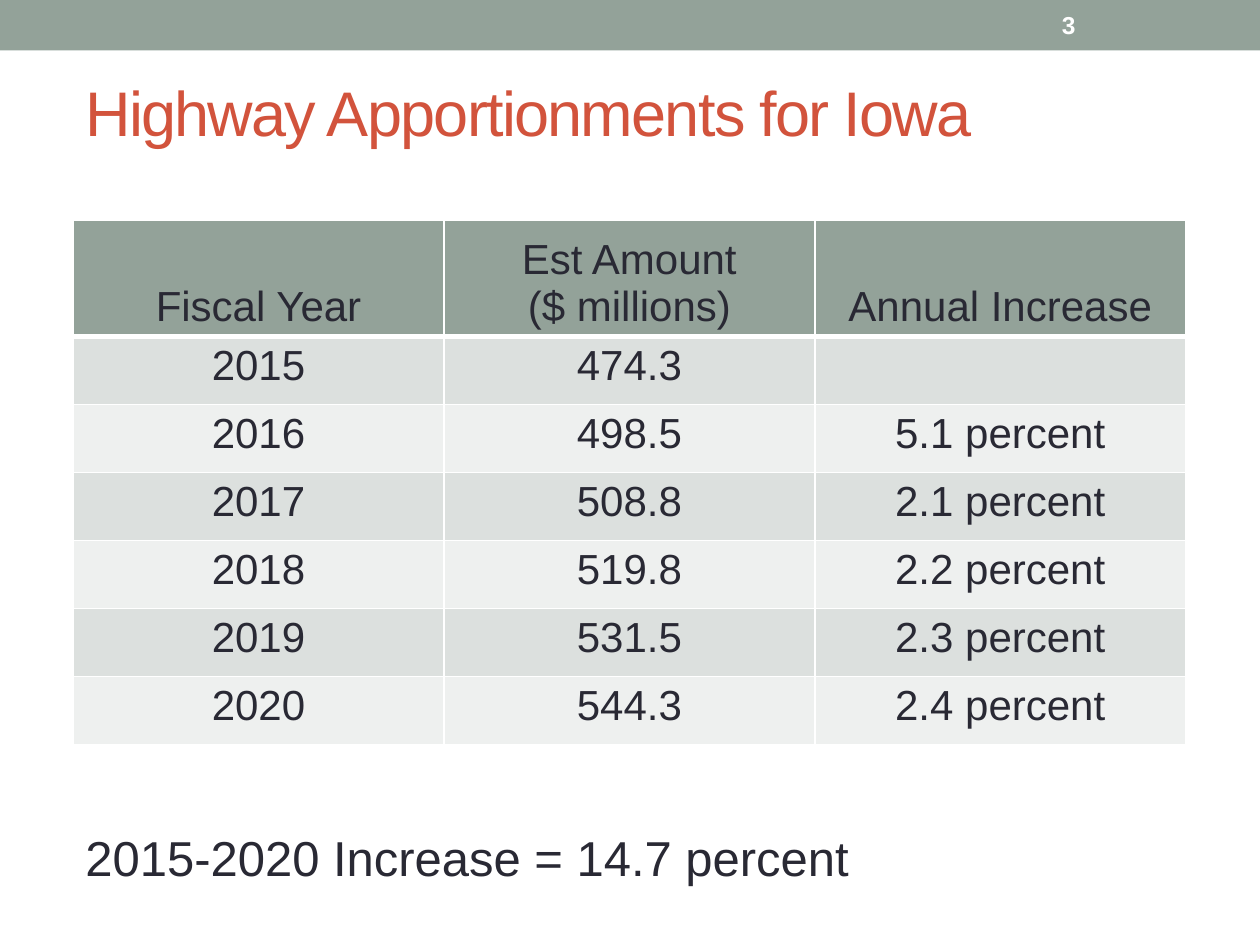
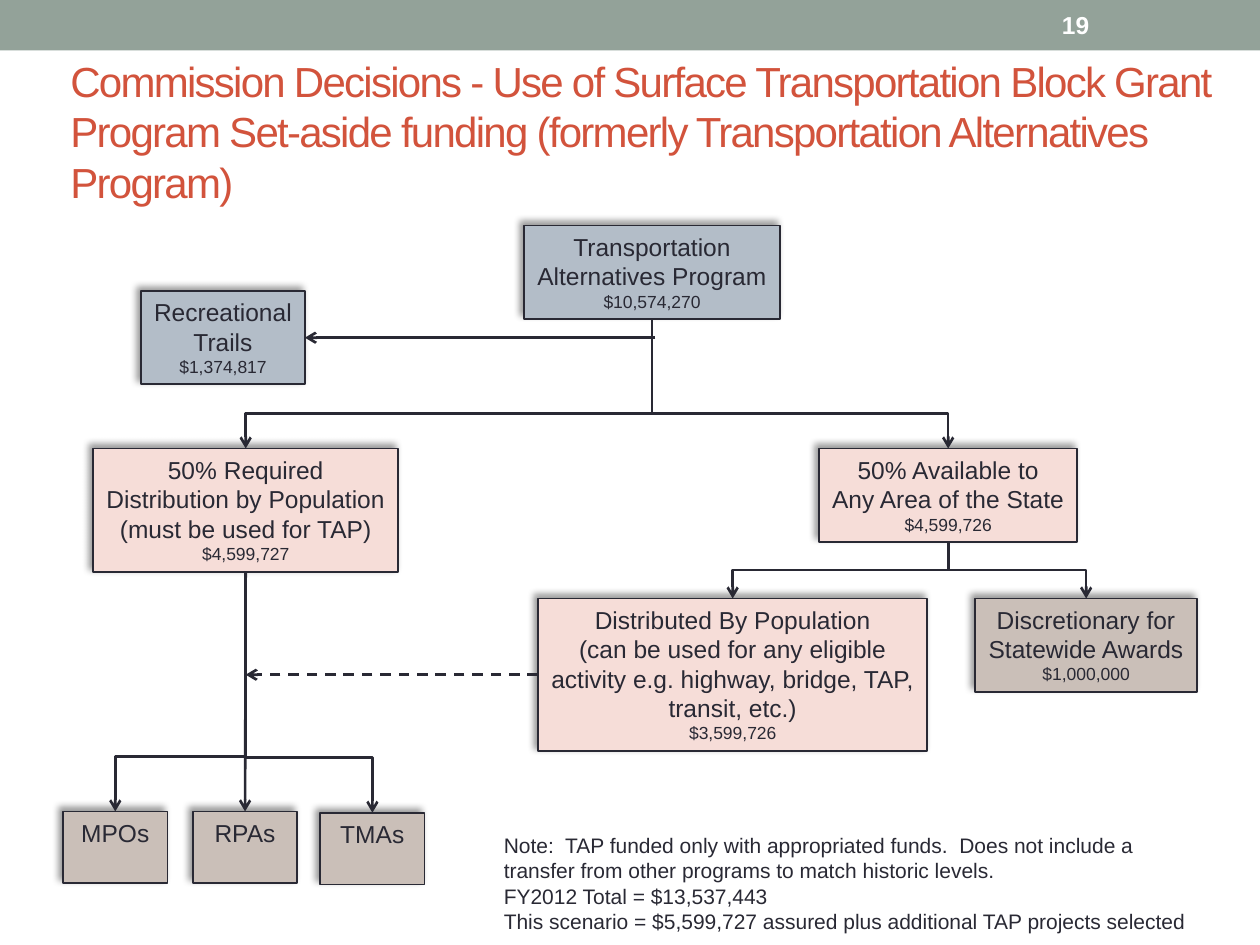
"""Build two slides on highway apportionments and set-aside funding."""
from lxml import etree
from pptx import Presentation
from pptx.dml.color import RGBColor
from pptx.enum.dml import MSO_LINE
from pptx.enum.shapes import MSO_CONNECTOR, MSO_SHAPE
from pptx.enum.text import MSO_ANCHOR, PP_ALIGN
from pptx.oxml.ns import qn
from pptx.util import Inches, Pt

FONT = "Arial"
INK, SAGE, RUST, WHITE = "292934", "93A299", "D2533C", "FFFFFF"
BLUE, PINK, TAUPE = "B3BDC8", "F6DDD8", "CABFB8"
STRIPES = ("DCE0DE", "EEF0EF")
TOP, MIDDLE, BOTTOM = MSO_ANCHOR.TOP, MSO_ANCHOR.MIDDLE, MSO_ANCHOR.BOTTOM
LEFT, CENTER = PP_ALIGN.LEFT, PP_ALIGN.CENTER
STRAIGHT, ELBOW = MSO_CONNECTOR.STRAIGHT, MSO_CONNECTOR.ELBOW
RECTANGLE, DASH = MSO_SHAPE.RECTANGLE, MSO_LINE.DASH
TOP_SITE, BOTTOM_SITE = 0, 2

APPORTIONMENTS = {
    "title": "Highway Apportionments for Iowa",
    "title_at": (0.58, 0.42, 9, 0.92),
    "title_size": 36,
    "number": "3",
    "header": ("Fiscal Year", "Est Amount\v($ millions)", "Annual Increase"),
    "years": [
        ("2015", "474.3", ""),
        ("2016", "498.5", "5.1 percent"),
        ("2017", "508.8", "2.1 percent"),
        ("2018", "519.8", "2.2 percent"),
        ("2019", "531.5", "2.3 percent"),
        ("2020", "544.3", "2.4 percent"),
    ],
    "summary": "2015-2020 Increase = 14.7 percent",
}

DECISIONS = {
    "title": "Commission Decisions - Use of Surface Transportation Block Grant "
             "Program Set-aside funding (formerly Transportation Alternatives Program)",
    "title_at": (0.46, 0.58, 9.42, 0.92),
    "title_size": 24,
    "number": "19",
    "funds": {
        "program": ((4.16, 1.79, 2.03, 0.74), BLUE,
                    ("Transportation", "Alternatives Program"), "$10,574,270"),
        "trails": ((1.12, 2.31, 1.3, 0.74), BLUE,
                   ("Recreational", "Trails"), "$1,374,817"),
        "required": ((0.74, 3.56, 2.42, 0.98), PINK,
                     ("50% Required", "Distribution by Population",
                      "(must be used for TAP)"), "$4,599,727"),
        "available": ((6.5, 3.56, 2.05, 0.74), PINK,
                      ("50% Available to", "Any Area of the State"), "$4,599,726"),
        "by_population": ((4.27, 4.75, 3.09, 1.21), PINK,
                          ("Distributed By Population", "(can be used for any eligible",
                           "activity e.g. highway, bridge, TAP,", "transit, etc.)"),
                          "$3,599,726"),
        "discretionary": ((7.74, 4.75, 1.76, 0.74), TAUPE,
                          ("Discretionary for", "Statewide Awards"), "$1,000,000"),
        "mpos": ((0.5, 6.44, 0.83, 0.57), TAUPE, ("MPOs",), None),
        "rpas": ((1.53, 6.44, 0.83, 0.57), TAUPE, ("RPAs",), None),
        "tmas": ((2.54, 6.45, 0.83, 0.57), TAUPE, ("TMAs",), None),
    },
    "branches": [
        ("program", "required", 0.73),
        ("program", "available", 0.73),
        ("available", "by_population", 0.5),
        ("available", "discretionary", 0.5),
        ("required", "mpos", 0.77),
        ("required", "tmas", 0.77),
    ],
    "note": [
        "Note:  TAP funded only with appropriated funds.  Does not include a",
        "transfer from other programs to match historic levels.",
        "FY2012 Total = $13,537,443",
        "This scenario = $5,599,727 assured plus additional TAP projects selected",
    ],
}


def color(value):
    """Turn a hex string into a colour."""
    return RGBColor.from_string(value)


def box(at):
    """Turn a tuple of inches into lengths."""
    return [Inches(length) for length in at]


def child(parent, tag, **attributes):
    """Append an XML element with the given attributes."""
    element = etree.SubElement(parent, qn(tag))
    for key, value in attributes.items():
        element.set(key, str(value))
    return element


def write(frame, lines, sizes, ink=INK, align=LEFT, anchor=TOP, bold=False, wrap=True):
    """Fill a text frame with one paragraph per line."""
    frame.text = "\n".join(lines)
    frame.word_wrap = wrap
    frame.vertical_anchor = anchor
    for paragraph, size in zip(frame.paragraphs, sizes):
        paragraph.alignment = align
        paragraph.font.size = Pt(size)
        for run in paragraph.runs:
            run.font.name = FONT
            run.font.size = Pt(size)
            run.font.bold = bold
            run.font.color.rgb = color(ink)


def add_text(slide, at, lines, size, **style):
    """Add a text box whose lines share one size."""
    frame = slide.shapes.add_textbox(*box(at)).text_frame
    write(frame, lines, [size] * len(lines), **style)
    return frame


def add_rectangle(slide, at, fill):
    """Add a plain filled rectangle."""
    rectangle = slide.shapes.add_shape(RECTANGLE, *box(at))
    rectangle.shadow.inherit = False
    rectangle.fill.solid()
    rectangle.fill.fore_color.rgb = color(fill)
    rectangle.line.fill.background()
    return rectangle


def add_page(deck, content):
    """Add a slide with the shared band, page number and title."""
    slide = deck.slides.add_slide(deck.slide_layouts[6])
    add_rectangle(slide, (0, 0, 10, 0.4), SAGE)
    add_text(slide, (8.33, 0.02, 1.17, 0.36), [content["number"]], 14,
             ink=WHITE, anchor=MIDDLE, bold=True)
    title = add_text(slide, content["title_at"], [content["title"]],
                     content["title_size"], ink=RUST, anchor=MIDDLE)
    title.paragraphs[0].runs[0].font._element.set("spc", "-100")
    return slide


def add_borders(cell, bottom):
    """Draw white borders around a table cell."""
    properties = cell._tc.get_or_add_tcPr()
    for side, width in (("L", 1), ("R", 1), ("T", 1), ("B", bottom)):
        border = child(properties, f"a:ln{side}", w=Pt(width))
        child(child(border, "a:solidFill"), "a:srgbClr", val=WHITE)


def add_apportionments(slide, header, years):
    """Add the table of yearly apportionments."""
    rows = [header, *years]
    table = slide.shapes.add_table(
        len(rows), len(header), *box((0.58, 1.75, 8.83, 4.16))).table
    for column in table.columns:
        column.width = Inches(8.83 / len(header))
    for index, values in enumerate(rows):
        is_header = index == 0
        table.rows[index].height = Inches(0.92 if is_header else 0.54)
        for cell, value in zip(table.rows[index].cells, values):
            write(cell.text_frame, [value], [24], align=CENTER)
            cell.vertical_anchor = BOTTOM if is_header else TOP
            add_borders(cell, 3 if is_header else 1)
            cell.fill.solid()
            cell.fill.fore_color.rgb = color(
                SAGE if is_header else STRIPES[(index - 1) % 2])


def add_fund(slide, at, fill, label, amount):
    """Add a shadowed box with a label and an optional amount."""
    fund = add_rectangle(slide, at, fill)
    fund.line.color.rgb = color(INK)
    fund.line.width = Pt(1)
    effects = fund._element.spPr.find(qn("a:effectLst"))
    shadow = child(effects, "a:outerShdw", blurRad=Pt(4), dist=Pt(3),
                   dir=225 * 60000, algn="br", rotWithShape=0)
    child(child(shadow, "a:srgbClr", val="000000"), "a:alpha", val=40000)
    lines, sizes = list(label), [14] * len(label)
    if amount:
        lines.append(amount)
        sizes.append(10)
    write(fund.text_frame, lines, sizes, align=CENTER, wrap=not amount)
    return fund


def add_arrow(slide, kind, start, end, dash=None):
    """Add a connector with an arrowhead at its end."""
    arrow = slide.shapes.add_connector(kind, *start, *end)
    arrow.line.color.rgb = color(INK)
    arrow.line.width = Pt(1.5)
    if dash:
        arrow.line.dash_style = dash
    child(arrow.line._get_or_add_ln(), "a:tailEnd", type="arrow")
    child(arrow._element.spPr, "a:effectLst")
    return arrow


def middle(fund):
    """Return the horizontal centre of a box."""
    return fund.left + fund.width // 2


def add_branch(slide, source, target, bend):
    """Join two boxes downwards by an elbow that turns at the given share."""
    start = middle(source), source.top + source.height
    end = middle(target), target.top
    branch = add_arrow(slide, ELBOW, start, end)
    branch.begin_connect(source, BOTTOM_SITE)
    branch.end_connect(target, TOP_SITE)
    run, drop = abs(end[0] - start[0]), end[1] - start[1]
    branch.left = (start[0] + end[0] - drop) // 2
    branch.top = (start[1] + end[1] - run) // 2
    branch.width, branch.height = drop, run
    goes_right = end[0] > start[0]
    properties = branch._element.spPr
    frame = properties.find(qn("a:xfrm"))
    frame.set("rot", str((270 if goes_right else 90) * 60000))
    frame.set("flipH", str(int(goes_right)))
    guides = properties.find(qn("a:prstGeom")).find(qn("a:avLst"))
    child(guides, "a:gd", name="adj1", fmla=f"val {round(bend * 100000)}")


def add_flow(slide, content):
    """Add the funding boxes and the arrows between them."""
    funds = {key: add_fund(slide, *fund) for key, fund in content["funds"].items()}
    for source, target, bend in content["branches"]:
        add_branch(slide, funds[source], funds[target], bend)

    required, rpas, trails = funds["required"], funds["rpas"], funds["trails"]
    trunk = middle(required)
    add_arrow(slide, STRAIGHT, (trunk, required.top + required.height),
              (middle(rpas), rpas.top))
    trails_y = trails.top + trails.height // 2
    add_arrow(slide, STRAIGHT, (Inches(5.2), trails_y),
              (trails.left + trails.width, trails_y))
    shared = funds["by_population"]
    shared_y = shared.top + shared.height // 2
    add_arrow(slide, STRAIGHT, (shared.left, shared_y), (trunk, shared_y), DASH)


def main():
    """Build the deck and save it."""
    deck = Presentation()
    deck.slide_width, deck.slide_height = Inches(10), Inches(7.5)

    slide = add_page(deck, APPORTIONMENTS)
    add_apportionments(slide, APPORTIONMENTS["header"], APPORTIONMENTS["years"])
    add_text(slide, (0.58, 6.52, 6.67, 0.57), [APPORTIONMENTS["summary"]], 28)

    slide = add_page(deck, DECISIONS)
    add_flow(slide, DECISIONS)
    add_text(slide, (3.9, 6.56, 5.65, 0.91), DECISIONS["note"], 12, wrap=False)
    deck.save("out.pptx")


if __name__ == "__main__":
    main()
